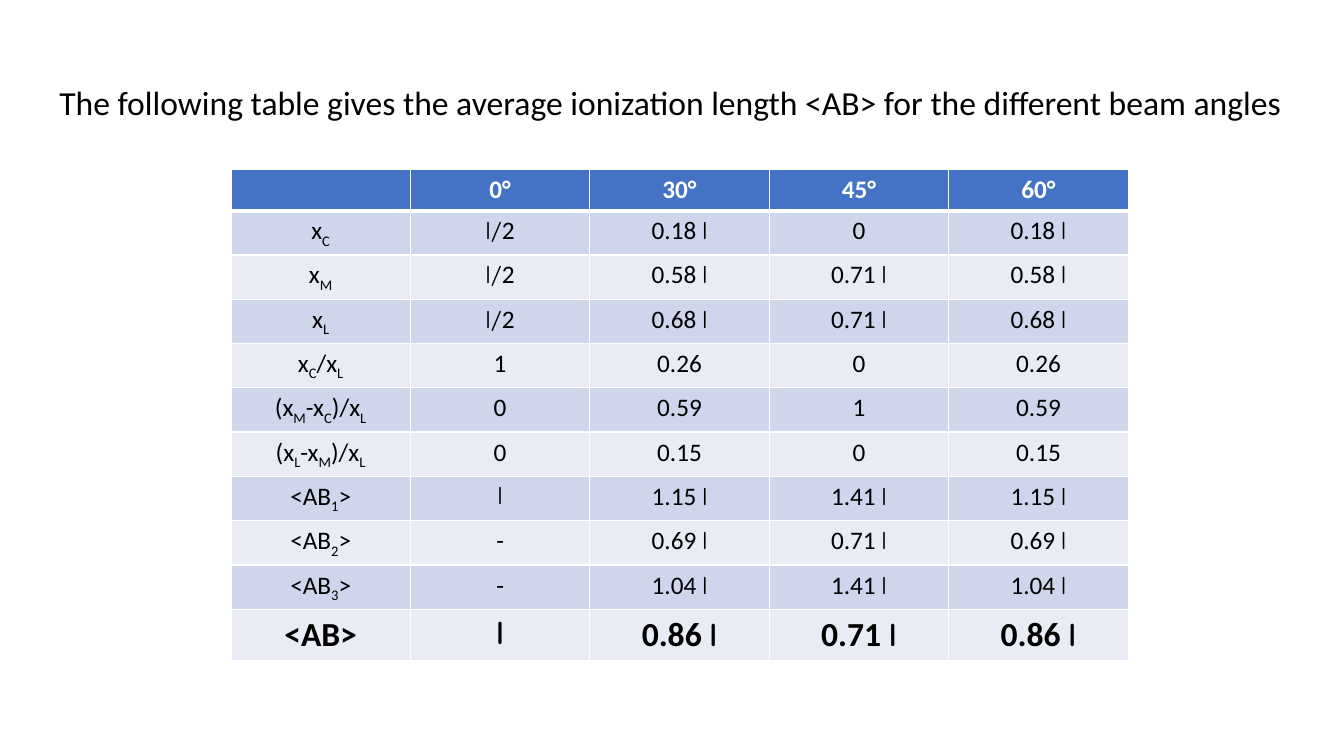
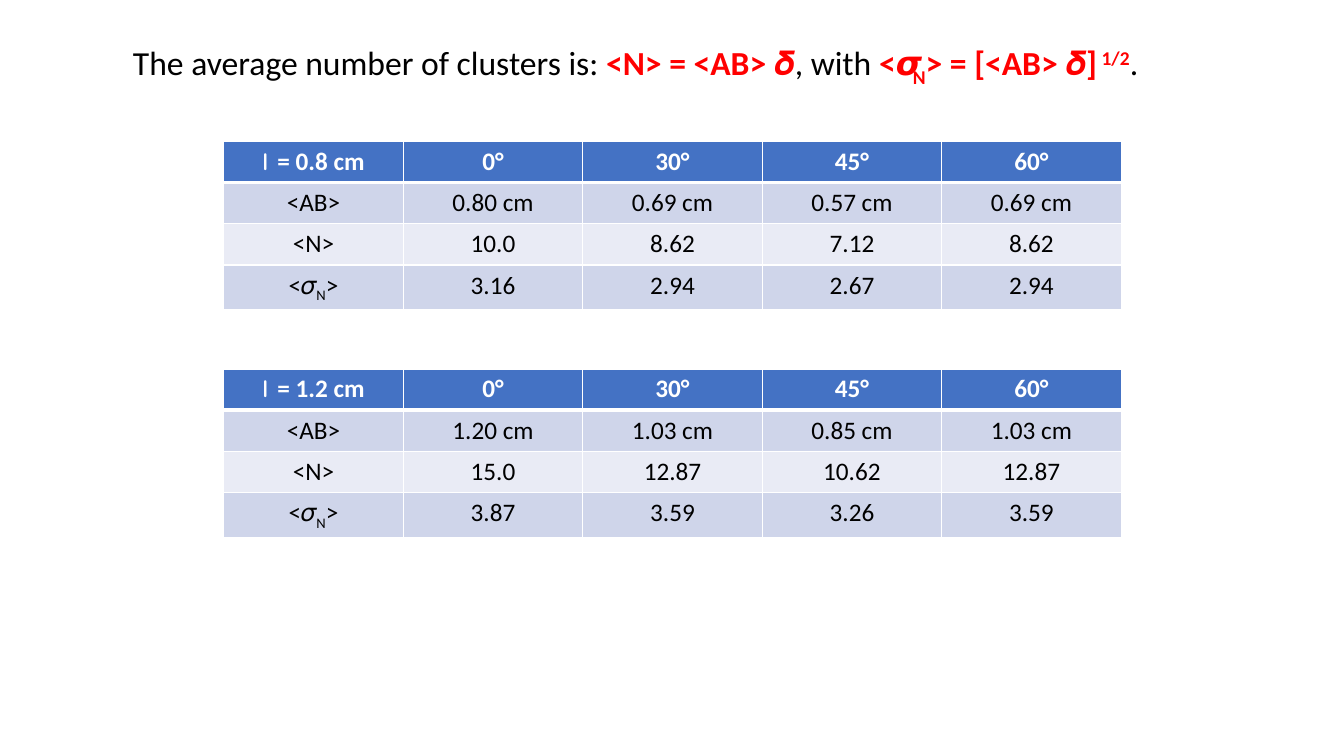
from pptx import Presentation
from pptx.dml.color import RGBColor
from pptx.enum.text import MSO_AUTO_SIZE, PP_ALIGN
from pptx.oxml.ns import qn
from pptx.util import Pt
from lxml.etree import SubElement

PX = 9144  # 100 px to the inch
COLORS = {"head": "4472C4", "odd": "CFD5EA", "even": "E9EBF5",
          "ink": "000000", "white": "FFFFFF", "red": "FF0000"}
FONT, SCRIPT = "Calibri", "Comic Neue"
BASE = {"_": "-25000", "^": "30000"}
MARKS = "_^`*"  # subscript, superscript, script font, red bold
COL, ROW = 178, 41
ANGLES = ["0°", "30°", "45°", "60°"]

LENGTHS = [
    ["x_C", "`l/`2", "0.18 `l", "0", "0.18 `l"],
    ["x_M", "`l/`2", "0.58 `l", "0.71 `l", "0.58 `l"],
    ["x_L", "`l/`2", "0.68 `l", "0.71 `l", "0.68 `l"],
    ["x_C_/x_L", "1", "0.26", "0", "0.26"],
    ["(x_M_-x_C_)/x_L", "0", "0.59", "1", "0.59"],
    ["(x_L_-x_M_)/x_L", "0", "0.15", "0", "0.15"],
    ["<AB_1_>", "`l", "1.15 `l", "1.41 `l", "1.15 `l"],
    ["<AB_2_>", "-", "0.69 `l", "0.71 `l", "0.69 `l"],
    ["<AB_3_>", "-", "1.04 `l", "1.41 `l", "1.04 `l"],
    ["<AB>", "`l", "0.86 `l", "0.71 `l", "0.86 `l"],
]
CLUSTERS = [
    (140, "`l `= 0.8 cm", [
        ["<AB>", "0.80 cm", "0.69 cm", "0.57 cm", "0.69 cm"],
        ["<N>", "10.0", "8.62", "7.12", "8.62"],
        ["<𝜎_N_>", "3.16", "2.94", "2.67", "2.94"]]),
    (366, "`l `= 1.2 cm", [
        ["<AB>", "1.20 cm", "1.03 cm", "0.85 cm", "1.03 cm"],
        ["<N>", "15.0", "12.87", "10.62", "12.87"],
        ["<𝜎_N_>", "3.87", "3.59", "3.26", "3.59"]]),
]


def rgb(name):
    return RGBColor.from_string(COLORS[name])


def split(text):
    """Yield each piece of text with the set of marks open around it."""
    active, piece = set(), ""
    for char in text:
        if char not in MARKS:
            piece += char
            continue
        if piece:
            yield piece, set(active)
        active ^= {char}
        piece = ""
    if piece:
        yield piece, active


def write(frame, text, size=18, color="ink", bold=False, align=None):
    para = frame.paragraphs[0]
    para.alignment = align
    para.font.size = Pt(size)
    for piece, marks in split(text):
        run = para.add_run()
        run.text = piece
        font = run.font
        font.name = SCRIPT if "`" in marks else FONT
        font.size = Pt(size)
        font.bold = bold or "*" in marks
        font.color.rgb = rgb("red" if "*" in marks else color)
        for mark in marks & set(BASE):
            run._r.get_or_add_rPr().set("baseline", BASE[mark])


def title(slide, x, y, width, text):
    box = slide.shapes.add_textbox(x * PX, y * PX, width * PX, 50 * PX)
    frame = box.text_frame
    frame.word_wrap = False
    frame.auto_size = MSO_AUTO_SIZE.SHAPE_TO_FIT_TEXT
    write(frame, text, size=24)


def border(cell, **widths):
    """Draw white cell edges, with widths in points by side."""
    props = cell._tc.get_or_add_tcPr()
    for side in "LRTB":
        line = SubElement(props, qn(f"a:ln{side}"),
                          w=str(Pt(widths.get(side, 1))))
        fill = SubElement(line, qn("a:solidFill"))
        SubElement(fill, qn("a:srgbClr"), val=COLORS["white"])


def grid(slide, x, y, corner, body, total=False):
    """Add a table of beam angles; total sets the last row large and bold."""
    rows = [[corner] + ANGLES] + body
    count, wide = len(rows), len(rows[0])
    table = slide.shapes.add_table(count, wide, x * PX, y * PX,
                                   wide * COL * PX, count * ROW * PX).table
    for col in table.columns:
        col.width = COL * PX
    for i, row in enumerate(rows):
        table.rows[i].height = ROW * PX
        head, last = i == 0, total and i == count - 1
        shade = "head" if head else "odd" if i % 2 else "even"
        for j, text in enumerate(row):
            cell = table.cell(i, j)
            border(cell, T=3 if i == 1 else 1, B=3 if head else 1)
            cell.fill.solid()
            cell.fill.fore_color.rgb = rgb(shade)
            write(cell.text_frame, text, size=24 if last else 18,
                  color="white" if head else "ink",
                  bold=head or last, align=PP_ALIGN.CENTER)


def main():
    deck = Presentation()
    deck.slide_width, deck.slide_height = 1333 * PX, 750 * PX
    blank = deck.slide_layouts[6]

    slide = deck.slides.add_slide(blank)
    grid(slide, 229, 168, "", LENGTHS, total=True)
    title(slide, 49, 76, 1235, "The following table gives the average "
          "ionization length <AB> for the different beam angles")

    slide = deck.slides.add_slide(blank)
    title(slide, 122, 37, 1038, "The average number of clusters is: "
          "*<N> = <AB> 𝜹*, with *<𝞼_N_> = [<AB> 𝜹]^ 1/2^*.")
    for y, corner, body in CLUSTERS:
        grid(slide, 222, y, corner, body)

    deck.save("out.pptx")


if __name__ == "__main__":
    main()
